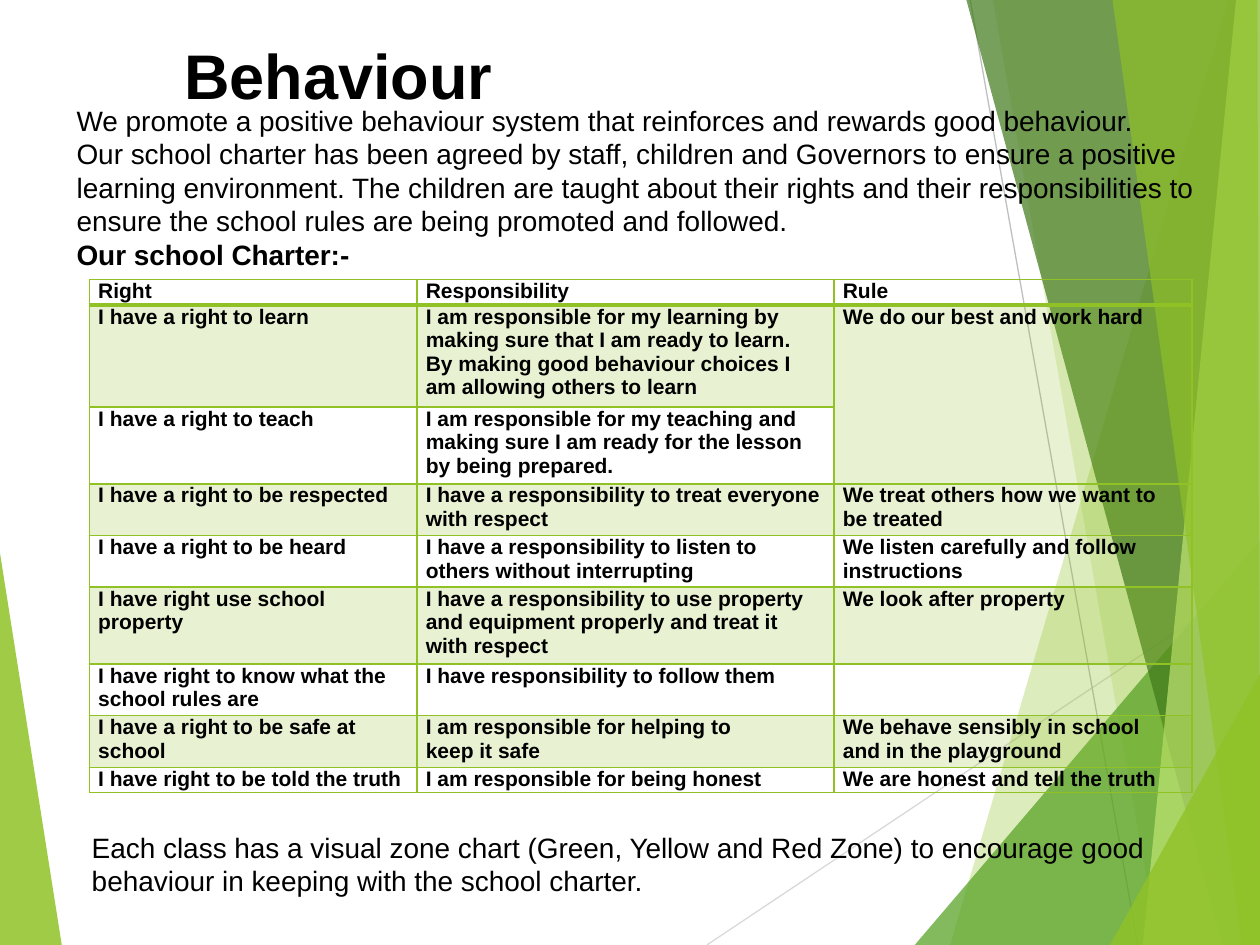
from lxml.etree import SubElement
from pptx import Presentation
from pptx.dml.color import RGBColor
from pptx.enum.shapes import MSO_CONNECTOR
from pptx.enum.text import PP_ALIGN
from pptx.oxml.ns import qn
from pptx.util import Inches, Pt

BLACK = RGBColor(0x00, 0x00, 0x00)
LIME = RGBColor(0x90, 0xC2, 0x26)
LEAF = RGBColor(0x54, 0xA0, 0x21)
FOREST = RGBColor(0x3F, 0x78, 0x19)
PALE = RGBColor(0xC0, 0xE4, 0x74)
LIGHT_GREY = RGBColor(0xD9, 0xD9, 0xD9)
GREY = RGBColor(0xBF, 0xBF, 0xBF)
FONT = "Arial"

RAYS = [
    ((5.61, 7.5), (10, 4.57), LIGHT_GREY),
    ((7.7, 0), (9.03, 7.5), GREY),
]
LEFT_FACET = ([(0, 4.39), (0.49, 7.5), (0, 7.5)], LIME, 85)
RIGHT_FACETS = [
    ([(9.75, 0), (7.54, 7.5), (10, 7.5), (10, 0)], LIME, 30),
    ([(7.88, 0), (9.19, 7.5), (10, 7.5), (10, 0)], LIME, 20),
    ([(7.26, 7.5), (10, 4.29), (10, 7.5)], LEAF, 72),
    ([(7.67, 0), (9.7, 7.5), (10, 7.5), (10, 0)], FOREST, 70),
    ([(9.81, 0), (9.07, 7.5), (10, 7.5), (10, 0)], PALE, 70),
    ([(8.83, 0), (9.86, 7.5), (10, 7.5), (9.98, 0)], LIME, 65),
    ([(8.81, 7.5), (10, 5.35), (10, 7.5)], LIME, 80),
]

INTRODUCTION = [
    "We promote a positive behaviour system that reinforces and rewards good behaviour.",
    "Our school charter has been agreed by staff, children and Governors to ensure a positive "
    "learning environment. The children are taught about their rights and their responsibilities "
    "to ensure the school rules are being promoted and followed.",
    "Our school Charter:-",
]
CLOSING = [
    "Each class has a visual zone chart (Green, Yellow and Red Zone) to encourage good "
    "behaviour in keeping with the school charter."
]
CHARTER = [
    ("Right", "Responsibility", "Rule"),
    ("I have a right to learn",
     "I am responsible for my learning by making sure that I am ready to learn.\n"
     "By making good behaviour choices I am allowing others to learn",
     "We do our best and work hard"),
    ("I have a right to teach",
     "I am responsible for my teaching and making sure I am ready for the lesson by being prepared.",
     ""),
    ("I have a right to be respected",
     "I have a responsibility to treat everyone with respect",
     "We treat others how we want to be treated"),
    ("I have a right to be heard",
     "I have a responsibility to listen to others without interrupting",
     "We listen carefully and follow instructions"),
    ("I have right use school property",
     "I have a responsibility to use property and equipment properly and treat it with respect",
     "We look after property"),
    ("I have right to know what the school rules are",
     "I have responsibility to follow them",
     ""),
    ("I have a right to be safe at school",
     "I am responsible for helping to\nkeep it safe",
     "We behave sensibly in school and in the playground"),
    ("I have right to be told the truth",
     "I am responsible for being honest",
     "We are honest and tell the truth"),
]
COLUMN_WIDTHS = [2.6, 3.31, 2.84]
ROW_HEIGHTS = [0.2, 0.81, 0.61, 0.41, 0.41, 0.61, 0.41, 0.41, 0.2]


def set_opacity(properties, percent):
    """Give the solid fill in the properties element an opacity."""
    color = properties.find(qn("a:solidFill"))[0]
    SubElement(color, qn("a:alpha"), val=str(percent * 1000))


def format_paragraph(paragraph, size, bold=False):
    """Set the font of every run in a paragraph."""
    for run in paragraph.runs:
        run.font.name = FONT
        run.font.size = Pt(size)
        run.font.bold = bold
        run.font.color.rgb = BLACK


def add_facet(slide, left, top, points, color, opacity):
    """Draw one translucent polygon offset by left and top."""
    corners = [(left + Inches(x), top + Inches(y)) for x, y in points]
    builder = slide.shapes.build_freeform(*corners[0], scale=1.0)
    builder.add_line_segments(corners[1:], close=True)
    shape = builder.convert_to_shape()
    shape.shadow.inherit = False
    shape.fill.solid()
    shape.fill.fore_color.rgb = color
    set_opacity(shape.element.spPr, opacity)
    shape.line.fill.background()


def add_backdrop(slide, left, top):
    """Draw the green facets and thin rays behind the content."""
    add_facet(slide, left, top, *LEFT_FACET)
    for start, end, color in RAYS:
        ray = slide.shapes.add_connector(
            MSO_CONNECTOR.STRAIGHT,
            left + Inches(start[0]), top + Inches(start[1]),
            left + Inches(end[0]), top + Inches(end[1]))
        ray.line.color.rgb = color
        ray.line.width = Pt(0.75)
        SubElement(ray.element.spPr, qn("a:effectLst"))
    for facet in RIGHT_FACETS:
        add_facet(slide, left, top, *facet)


def add_text(slide, left, top, width, height, lines, size):
    """Add a wrapped text box and return its text frame."""
    text_frame = slide.shapes.add_textbox(left, top, width, height).text_frame
    text_frame.word_wrap = True
    text_frame.text = "\n".join(lines)
    for paragraph in text_frame.paragraphs:
        format_paragraph(paragraph, size)
    return text_frame


def add_title(slide, left, top, width, height):
    """Add the bold centred heading."""
    paragraph = add_text(slide, left, top, width, height, ["Behaviour"], 36).paragraphs[0]
    paragraph.alignment = PP_ALIGN.CENTER
    paragraph.line_spacing = 0.9
    format_paragraph(paragraph, 36, bold=True)


def add_introduction(slide, left, top, width, height):
    """Add the opening text with its bold lead-in to the table."""
    text_frame = add_text(slide, left, top, width, height, INTRODUCTION, 16)
    format_paragraph(text_frame.paragraphs[-1], 16, bold=True)


def set_borders(cell, top_width, bottom_width):
    """Outline a cell in lime."""
    properties = cell._tc.get_or_add_tcPr()
    widths = {"a:lnL": 1, "a:lnR": 1, "a:lnT": top_width, "a:lnB": bottom_width}
    for tag, width in widths.items():
        line = SubElement(properties, qn(tag), w=str(Pt(width)))
        SubElement(SubElement(line, qn("a:solidFill")), qn("a:srgbClr"), val=str(LIME))


def format_cell(cell, row, text, shaded):
    """Fill in one charter cell."""
    cell.margin_left = cell.margin_right = Inches(0.07)
    cell.margin_top = cell.margin_bottom = 0
    set_borders(cell, 2 if row == 1 else 1, 2 if row == 0 else 1)
    if shaded:
        cell.fill.solid()
        cell.fill.fore_color.rgb = LIME
        set_opacity(cell._tc.tcPr, 20)
    else:
        cell.fill.background()
    if text:
        cell.text_frame.text = text
    for paragraph in cell.text_frame.paragraphs:
        paragraph.font.size = Pt(12)
        format_paragraph(paragraph, 12, bold=True)


def add_charter(slide, left, top, width, height):
    """Add the charter table with alternate rows shaded."""
    table = slide.shapes.add_table(
        len(CHARTER), len(COLUMN_WIDTHS), left, top, width, height).table
    table.first_row = table.horz_banding = False
    for column, column_width in zip(table.columns, COLUMN_WIDTHS):
        column.width = int(width * column_width / sum(COLUMN_WIDTHS))
    for row, row_height in zip(table.rows, ROW_HEIGHTS):
        row.height = int(height * row_height / sum(ROW_HEIGHTS))
    table.cell(1, 2).merge(table.cell(2, 2))
    for row, texts in enumerate(CHARTER):
        for column, text in enumerate(texts):
            format_cell(table.cell(row, column), row, text, row % 2 == 1)


def main():
    """Build and save the behaviour slide."""
    presentation = Presentation()
    presentation.slide_width = Inches(10)
    presentation.slide_height = Inches(7.5)
    slide = presentation.slides.add_slide(presentation.slide_layouts[6])
    add_backdrop(slide, 0, 0)
    add_title(slide, Inches(1.03), Inches(0.31), Inches(3.31), Inches(0.65))
    add_introduction(slide, Inches(0.51), Inches(0.77), Inches(9.14), Inches(1.45))
    add_charter(slide, Inches(0.71), Inches(2.22), Inches(8.75), Inches(4.07))
    add_text(slide, Inches(0.63), Inches(6.54), Inches(8.74), Inches(0.64), CLOSING, 16)
    presentation.save("out.pptx")


if __name__ == "__main__":
    main()
